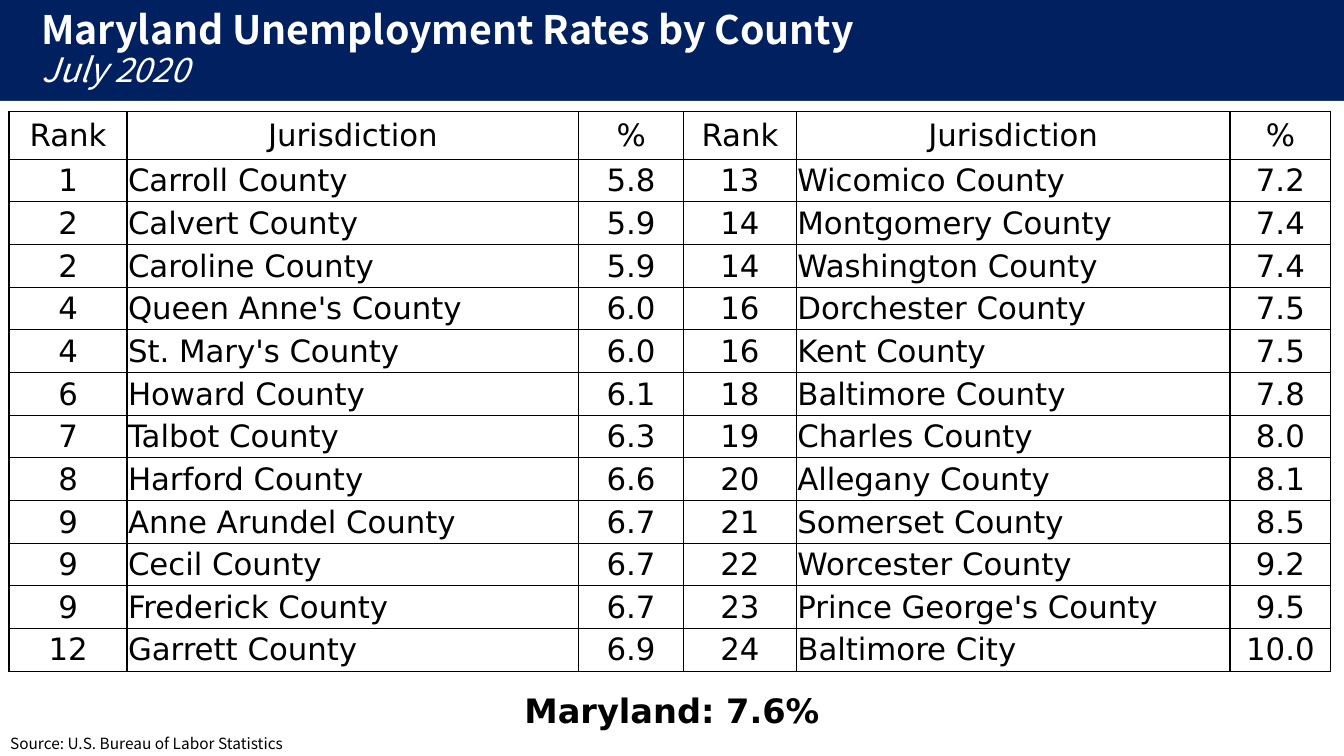
"""Build the slide of Maryland unemployment rates by county, July 2020."""
from dataclasses import dataclass

from lxml.etree import SubElement
from pptx import Presentation
from pptx.dml.color import RGBColor
from pptx.enum.shapes import MSO_SHAPE as Preset
from pptx.enum.text import MSO_ANCHOR as Anchor, MSO_AUTO_SIZE as AutoSize, PP_ALIGN as Align
from pptx.oxml.ns import qn
from pptx.util import Inches, Pt


@dataclass(frozen=True)
class Theme:
    navy: str = "002060"
    white: str = "FFFFFF"
    black: str = "000000"
    heading_font: str = "Noto Sans CJK JP"
    data_font: str = "DejaVu Sans"
    title_size: int = 28
    subtitle_size: int = 24
    total_size: int = 24
    table_size: int = 22
    source_size: int = 11
    border: int = 1


class RatesSlide:
    def __init__(self, deck, theme):
        self.theme = theme
        self.slide = deck.slides.add_slide(deck.slide_layouts[1])
        backdrop = self.slide.background.fill
        backdrop.solid()
        backdrop.fore_color.rgb = RGBColor.from_string(theme.navy)

    def style(self, font, name, color, size=None, bold=None):
        font.name = name
        font.color.rgb = RGBColor.from_string(color)
        if size:
            font.size = Pt(size)
        font.bold = bold

    def place(self, holder, left, top, width, height):
        holder.left, holder.top = Inches(left), Inches(top)
        holder.width, holder.height = Inches(width), Inches(height)
        frame = holder.text_frame
        frame.auto_size = AutoSize.NONE
        frame.vertical_anchor = Anchor.MIDDLE
        line = frame.paragraphs[0]
        line.alignment = Align.LEFT
        line.line_spacing = 0.9
        line.space_before = Pt(0)
        return line

    def panel(self, left, top, width, height):
        panel = self.slide.shapes.add_shape(
            Preset.RECTANGLE, Inches(left), Inches(top), Inches(width), Inches(height))
        panel.shadow.inherit = False
        panel.fill.solid()
        panel.fill.fore_color.rgb = RGBColor.from_string(self.theme.white)
        panel.line.fill.background()
        self.slide.shapes.element.insert(2, panel.element)

    def title(self, heading, period, *box):
        theme = self.theme
        line = self.place(self.slide.shapes.title, *box)
        self.style(line.font, theme.heading_font, theme.white)
        heading_run = line.add_run()
        heading_run.text = heading
        heading_run.font.size, heading_run.font.bold = Pt(theme.title_size), True
        line.add_line_break()
        period_run = line.add_run()
        period_run.text = period
        period_run.font.size, period_run.font.italic = Pt(theme.subtitle_size), True

    def source(self, credit, *box):
        line = self.place(self.slide.placeholders[1], *box)
        line.text = credit
        properties = line._p.get_or_add_pPr()
        properties.set("marL", "0")
        properties.set("indent", "0")
        SubElement(properties, qn("a:buNone"))
        self.style(line.font, self.theme.heading_font, self.theme.black, self.theme.source_size)

    def outline(self, cell):
        properties = cell._tc.get_or_add_tcPr()
        for side in ("lnL", "lnR", "lnT", "lnB"):
            edge = SubElement(properties, qn(f"a:{side}"), w=str(Pt(self.theme.border)))
            paint = SubElement(edge, qn("a:solidFill"))
            SubElement(paint, qn("a:srgbClr"), val=self.theme.black)
        cell.fill.background()

    def table(self, rows, widths, header_height, left, top, width, height):
        grid = self.slide.shapes.add_table(
            len(rows), len(widths), Inches(left), Inches(top), Inches(width), Inches(height)).table
        grid.first_row = grid.horz_banding = False
        for column, column_width in zip(grid.columns, widths):
            column.width = Inches(column_width)
        row_height = (height - header_height) / (len(rows) - 1)
        for r, values in enumerate(rows):
            grid.rows[r].height = Inches(row_height if r else header_height)
            for c, value in enumerate(values):
                cell = grid.cell(r, c)
                self.outline(cell)
                cell.vertical_anchor = Anchor.MIDDLE
                if r:
                    cell.margin_left = cell.margin_right = cell.margin_top = Inches(0.01)
                    cell.margin_bottom = 0
                cell.text = value
                entry = cell.text_frame.paragraphs[0]
                entry.alignment = Align.LEFT if r and c % 3 == 1 else Align.CENTER
                self.style(entry.font, self.theme.data_font, self.theme.black,
                           self.theme.table_size)

    def total(self, caption, left, top, width, height):
        frame = self.slide.shapes.add_textbox(
            Inches(left), Inches(top), Inches(width), Inches(height)).text_frame
        frame.word_wrap = False
        frame.auto_size = AutoSize.SHAPE_TO_FIT_TEXT
        line = frame.paragraphs[0]
        line.text = caption
        line.alignment = Align.CENTER
        self.style(line.font, self.theme.data_font, self.theme.black, self.theme.total_size, True)


HEADER = ("Rank", "Jurisdiction", "%")
LOWER_RATES = [
    ("1", "Carroll County", "5.8"),
    ("2", "Calvert County", "5.9"),
    ("2", "Caroline County", "5.9"),
    ("4", "Queen Anne's County", "6.0"),
    ("4", "St. Mary's County", "6.0"),
    ("6", "Howard County", "6.1"),
    ("7", "Talbot County", "6.3"),
    ("8", "Harford County", "6.6"),
    ("9", "Anne Arundel County", "6.7"),
    ("9", "Cecil County", "6.7"),
    ("9", "Frederick County", "6.7"),
    ("12", "Garrett County", "6.9"),
]
HIGHER_RATES = [
    ("13", "Wicomico County", "7.2"),
    ("14", "Montgomery County", "7.4"),
    ("14", "Washington County", "7.4"),
    ("16", "Dorchester County", "7.5"),
    ("16", "Kent County", "7.5"),
    ("18", "Baltimore County", "7.8"),
    ("19", "Charles County", "8.0"),
    ("20", "Allegany County", "8.1"),
    ("21", "Somerset County", "8.5"),
    ("22", "Worcester County", "9.2"),
    ("23", "Prince George's County", "9.5"),
    ("24", "Baltimore City", "10.0"),
]


def main():
    deck = Presentation()
    deck.slide_width, deck.slide_height = Inches(13.33), Inches(7.5)
    rates = RatesSlide(deck, Theme())
    rates.panel(0, 1, 13.33, 6.5)
    rates.title("Maryland Unemployment Rates by County", "July 2020", 0.31, 0.05, 11.5, 0.9)
    rates.source("Source: U.S. Bureau of Labor Statistics", 0, 7.26, 5.73, 0.25)
    ranking = [HEADER * 2] + [low + high for low, high in zip(LOWER_RATES, HIGHER_RATES)]
    rates.table(ranking, (1.17, 4.48, 1.04, 1.12, 4.3, 1), 0.47, 0.09, 1.11, 13.1, 5.55)
    rates.total("Maryland: 7.6%", 5.05, 6.8, 3.23, 0.5)
    deck.save("out.pptx")


if __name__ == "__main__":
    main()
